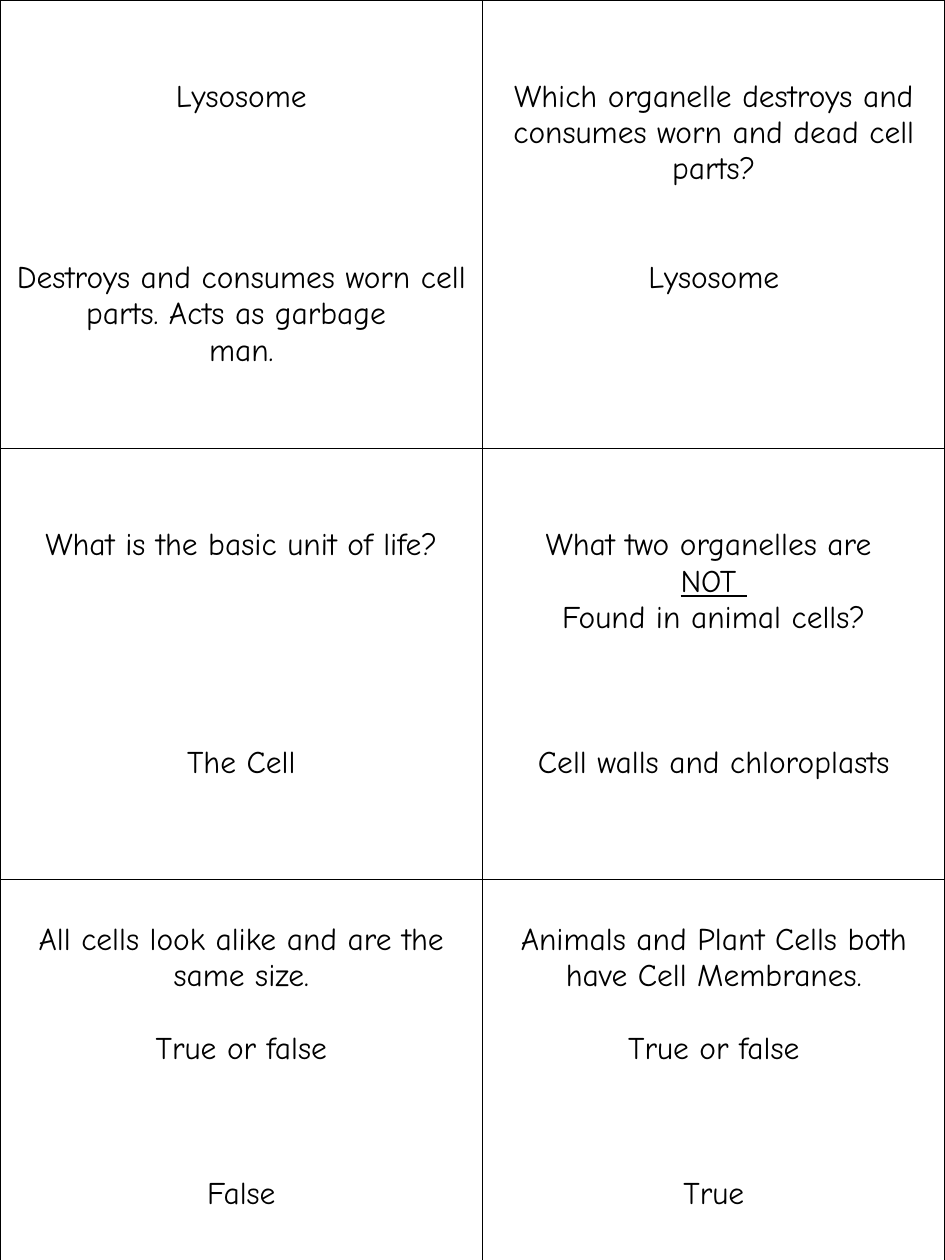
from dataclasses import dataclass

from lxml import etree
from pptx import Presentation
from pptx.dml.color import RGBColor
from pptx.enum import text
from pptx.oxml import ns
from pptx.table import _Cell
from pptx.util import Inches, Pt

COLORS = {"ink": "000000", "paper": "FFFFFF"}
FONT = "Comic Neue"
FONT_SIZE = 18
LINE_PITCH = 20.7  # points from one line of text to the next
COLUMN_WIDTHS = (3.83, 3.67)
ROW_HEIGHTS = (3.56, 3.42, 3.54)


@dataclass(frozen=True)
class Line:
    words: str
    lines_above: int = 0
    underline: bool = False


CARDS = (
    (
        (Line("Lysosome", 2),
         Line("Destroys and consumes worn cell parts. Acts as garbage ", 4),
         Line("man.")),
        (Line("Which organelle destroys and consumes worn and dead cell parts?", 2),
         Line("Lysosome", 2)),
    ),
    (
        (Line("What is the basic unit of life?", 2),
         Line("The Cell", 5)),
        (Line("What two organelles are ", 2),
         Line("NOT ", underline=True),
         Line("Found in animal cells?"),
         Line("Cell walls and chloroplasts", 3)),
    ),
    (
        (Line("All cells look alike and are the same size.", 1),
         Line("True or false", 1),
         Line("False", 3)),
        (Line("Animals and Plant Cells both have Cell Membranes.", 1),
         Line("True or false", 1),
         Line("True", 3)),
    ),
)


def add_borders(cell: _Cell) -> None:
    """Put 1 pt lines on all sides, ahead of the fill as the schema requires."""
    properties = cell._tc.get_or_add_tcPr()
    for position, side in enumerate(("lnL", "lnR", "lnT", "lnB")):
        border = etree.Element(ns.qn(f"a:{side}"), w=str(Pt(1)))
        fill = etree.SubElement(border, ns.qn("a:solidFill"))
        etree.SubElement(fill, ns.qn("a:srgbClr"), val=COLORS["ink"])
        properties.insert(position, border)


def fill_card(cell: _Cell, lines: tuple[Line, ...]) -> None:
    cell.fill.solid()
    cell.fill.fore_color.rgb = RGBColor.from_string(COLORS["paper"])
    add_borders(cell)
    cell.vertical_anchor = text.MSO_ANCHOR.TOP
    cell.margin_top = Inches(0.05) + Pt(lines[0].lines_above * LINE_PITCH)
    frame = cell.text_frame
    for index, line in enumerate(lines):
        para = frame.add_paragraph() if index else frame.paragraphs[0]
        para.alignment = text.PP_ALIGN.CENTER
        if index:
            para.space_before = Pt(line.lines_above * LINE_PITCH)
        para.font.name = FONT
        para.font.size = Pt(FONT_SIZE)
        para.font.color.rgb = RGBColor.from_string(COLORS["ink"])
        span = para.add_run()
        span.text = line.words
        if line.underline:
            span.font.underline = True


def main() -> None:
    deck = Presentation()
    deck.slide_width, deck.slide_height = Inches(7.5), Inches(10)
    page = deck.slides.add_slide(deck.slide_layouts[6])
    table = page.shapes.add_table(
        len(ROW_HEIGHTS), len(COLUMN_WIDTHS), 0, 0,
        Inches(sum(COLUMN_WIDTHS)), Inches(sum(ROW_HEIGHTS)),
    ).table
    table.first_row = table.horz_banding = False
    for column, width in zip(table.columns, COLUMN_WIDTHS):
        column.width = Inches(width)
    for row, height, cards in zip(table.rows, ROW_HEIGHTS, CARDS):
        row.height = Inches(height)
        for cell, lines in zip(row.cells, cards):
            fill_card(cell, lines)
    deck.save("out.pptx")


if __name__ == "__main__":
    main()
